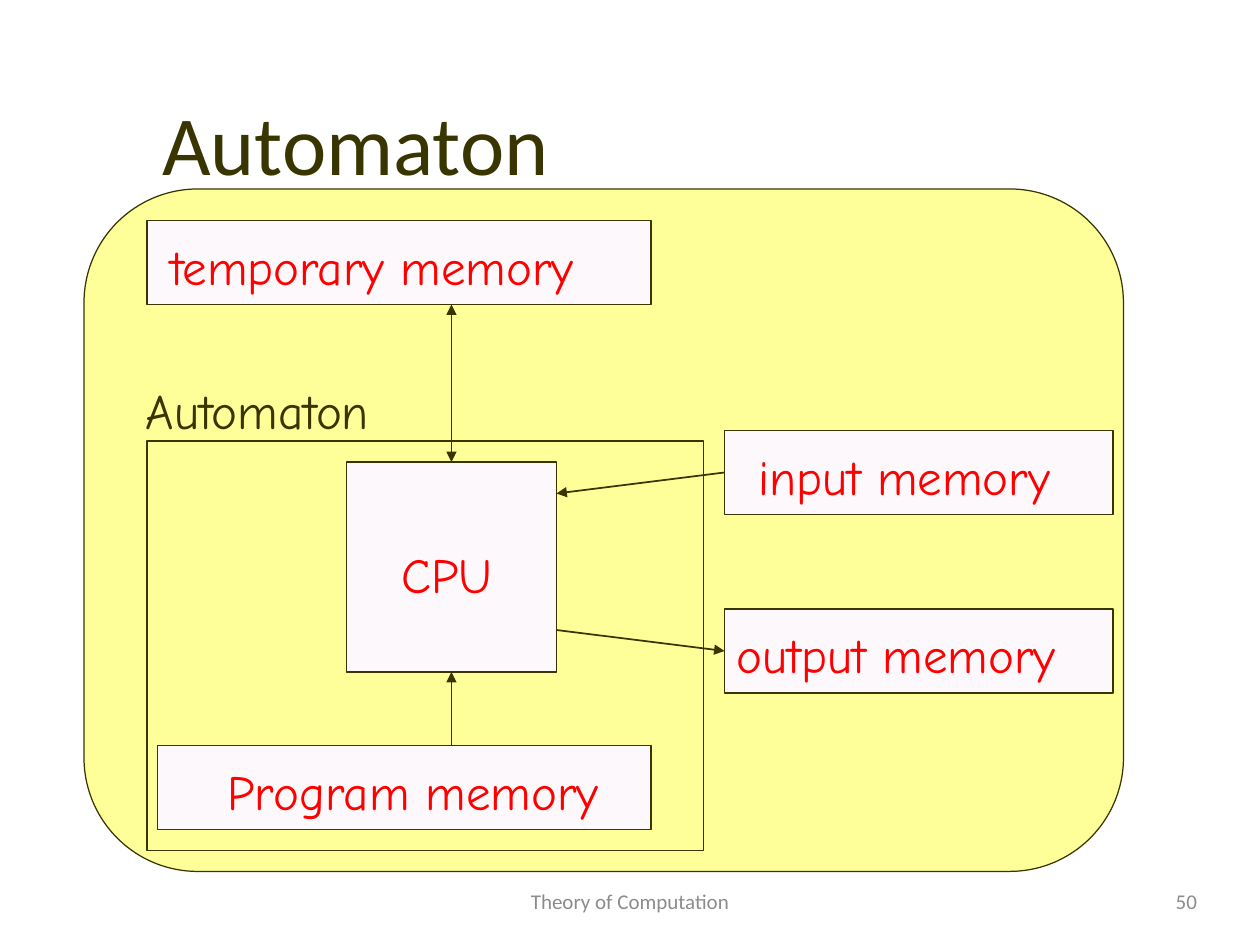
from dataclasses import dataclass
from typing import Optional

from lxml import etree
from pptx import Presentation
from pptx.dml.color import RGBColor
from pptx.enum.shapes import MSO_CONNECTOR, MSO_SHAPE
from pptx.enum.text import MSO_ANCHOR, MSO_AUTO_SIZE, PP_ALIGN
from pptx.oxml.ns import qn
from pptx.util import Emu, Pt

PX = 7620  # EMU per px, 120 px to the inch
LEFT, CENTER, RIGHT = PP_ALIGN.LEFT, PP_ALIGN.CENTER, PP_ALIGN.RIGHT
TOP, MIDDLE = MSO_ANCHOR.TOP, MSO_ANCHOR.MIDDLE
RECT, ROUNDED = MSO_SHAPE.RECTANGLE, MSO_SHAPE.ROUNDED_RECTANGLE
STRAIGHT = MSO_CONNECTOR.STRAIGHT
SITE_TOP, SITE_LEFT, SITE_BOTTOM = 0, 1, 2

INK, RED, GRAY = "383500", "FF0000", "8C8C8C"
YELLOW, PALE = "FFFF99", "FDF8FC"
BODY, HAND = "Calibri", "Comic Neue"


@dataclass
class Box:
    x: int
    y: int
    w: int
    h: int


@dataclass
class Label:
    text: str
    font: str
    size: int
    color: str
    align: PP_ALIGN = LEFT
    anchor: MSO_ANCHOR = TOP
    left: int = 0
    top: int = 0


@dataclass
class Unit:
    box: Box
    text: str
    left: int
    top: int = 15
    align: PP_ALIGN = LEFT


@dataclass
class Arrow:
    """A line whose ends join a unit's side where a (unit, site) pair is given."""
    start: tuple[int, int]
    end: tuple[int, int]
    begin_at: Optional[tuple[str, int]] = None
    end_at: Optional[tuple[str, int]] = None
    double: bool = False


UNITS = {
    "cpu": Unit(Box(330, 440, 200, 200), "CPU", 52, 79),
    "input": Unit(Box(690, 410, 370, 80), "input memory", 32),
    "output": Unit(Box(690, 580, 370, 80), "output memory", 12),
    "program": Unit(Box(150, 710, 470, 80), "Program memory", 17, align=CENTER),
    "temporary": Unit(Box(140, 210, 480, 80), "temporary memory", 22),
}
ARROWS = [
    Arrow((430, 290), (430, 440), end_at=("cpu", SITE_TOP), double=True),
    Arrow((430, 710), (430, 640), end_at=("cpu", SITE_BOTTOM)),
    Arrow((690, 450), (530, 470), begin_at=("input", SITE_LEFT)),
    Arrow((530, 600), (690, 620), end_at=("output", SITE_LEFT)),
]
TEXTS = [
    (Box(410, 834, 380, 48),
     Label("Theory of Computation", BODY, 12, GRAY, CENTER, MIDDLE)),
    (Box(860, 834, 280, 48), Label("50", BODY, 12, GRAY, RIGHT, MIDDLE)),
    (Box(138, 361, 239, 59), Label("Automaton", HAND, 28, INK, left=1, top=1)),
]


def px(n: int) -> Emu:
    return Emu(n * PX)


def rgb(value: str) -> RGBColor:
    return RGBColor.from_string(value)


def place(s, box: Box) -> None:
    s.left, s.top, s.width, s.height = map(px, (box.x, box.y, box.w, box.h))


def write(s, label: Label) -> None:
    tf = s.text_frame
    frame_format = {
        "word_wrap": True, "auto_size": MSO_AUTO_SIZE.NONE,
        "vertical_anchor": label.anchor,
        "margin_left": px(label.left), "margin_top": px(label.top),
        "margin_right": 0, "margin_bottom": 0,
    }
    for name, value in frame_format.items():
        setattr(tf, name, value)
    p = tf.paragraphs[0]
    p.alignment = label.align
    r = p.add_run()
    r.text = label.text
    r.font.color.rgb = rgb(label.color)
    for name, value in {"name": label.font, "size": Pt(label.size)}.items():
        setattr(r.font, name, value)


def add_box(slide, box: Box, fill: Optional[str], kind: MSO_SHAPE = RECT):
    s = slide.shapes.add_shape(kind, px(box.x), px(box.y), px(box.w), px(box.h))
    s.shadow.inherit = False
    if fill:
        s.fill.solid()
        s.fill.fore_color.rgb = rgb(fill)
    else:
        s.fill.background()
    s.line.color.rgb = rgb(INK)
    s.line.width = Pt(0.72)
    return s


def add_arrow(slide, arrow: Arrow, units: dict) -> None:
    s = slide.shapes.add_connector(STRAIGHT, *map(px, arrow.start + arrow.end))
    if arrow.begin_at:
        name, site = arrow.begin_at
        s.begin_connect(units[name], site)
    if arrow.end_at:
        name, site = arrow.end_at
        s.end_connect(units[name], site)
    s.line.color.rgb = rgb(INK)
    s.line.width = Pt(1)
    ln = s.line._get_or_add_ln()
    for tag in ("a:headEnd", "a:tailEnd") if arrow.double else ("a:tailEnd",):
        etree.SubElement(ln, qn(tag), type="triangle")
    etree.SubElement(s._element.spPr, qn("a:effectLst"))


def main() -> None:
    prs = Presentation()
    prs.slide_width, prs.slide_height = px(1200), px(900)
    slide = prs.slides.add_slide(prs.slide_layouts[5])

    add_box(slide, Box(80, 180, 990, 650), YELLOW, ROUNDED)
    title = slide.shapes.title
    place(title, Box(120, 79, 437, 100))
    write(title, Label("Automaton", BODY, 48, INK, CENTER, MIDDLE, top=12))

    units = {}
    for name, unit in UNITS.items():
        units[name] = add_box(slide, unit.box, PALE)
        write(units[name], Label(unit.text, HAND, 28, RED, unit.align,
                                 left=unit.left, top=unit.top))
    for arrow in ARROWS:
        add_arrow(slide, arrow, units)
    add_box(slide, Box(140, 420, 530, 390), None)

    for box, label in TEXTS:
        s = slide.shapes.add_textbox(0, 0, 0, 0)
        place(s, box)
        write(s, label)
    prs.save("out.pptx")


if __name__ == "__main__":
    main()
